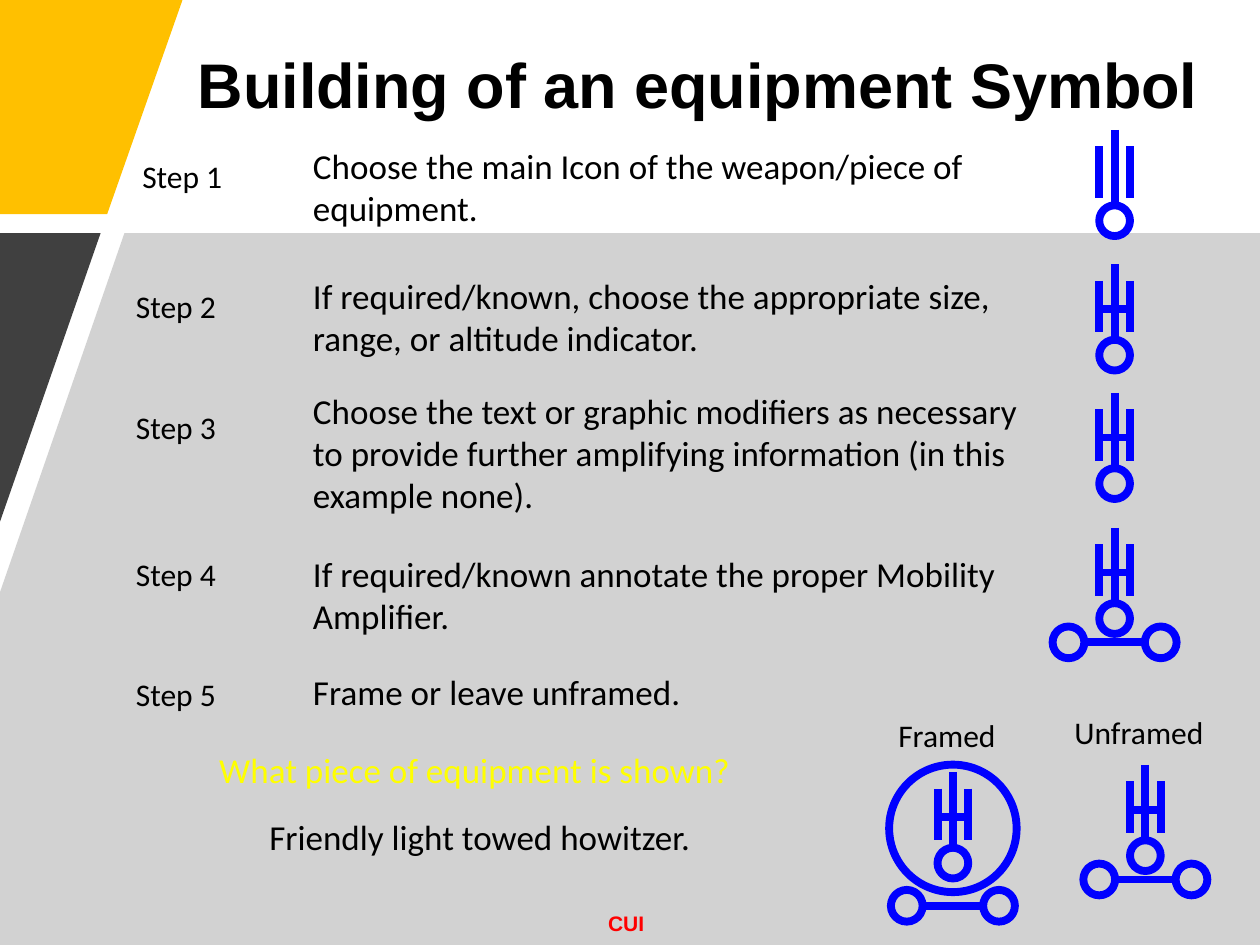
from lxml.etree import SubElement
from pptx import Presentation
from pptx.dml.color import RGBColor
from pptx.enum.shapes import MSO_CONNECTOR, MSO_SHAPE
from pptx.enum.text import MSO_AUTO_SIZE, PP_ALIGN
from pptx.oxml.ns import qn
from pptx.util import Cm, Pt


def colour(value):
    return RGBColor.from_string(value)


def write_text(frame, text, size=20, font="Calibri", fill="000000", bold=False, align=PP_ALIGN.LEFT):
    paragraph = frame.paragraphs[0]
    paragraph.alignment = align
    run = paragraph.add_run()
    run.text = text
    run.font.size = Pt(size)
    run.font.name = font
    run.font.bold = bold
    run.font.color.rgb = colour(fill)


class SymbolSlide:
    """Holds the drawing style and the slide, and adds each kind of element."""

    blue = "0000FF"
    weight = Pt(4.5)

    def __init__(self, slide):
        self.slide = slide

    def panel(self, points, fill, opacity=None):
        start, *others = [(Cm(x), Cm(y)) for x, y in points]
        builder = self.slide.shapes.build_freeform(*start)
        builder.add_line_segments(others)
        shape = builder.convert_to_shape()
        shape.shadow.inherit = False
        shape.fill.solid()
        shape.fill.fore_color.rgb = colour(fill)
        shape.line.fill.background()
        if opacity is not None:
            fill_colour = shape.fill._xPr.find(qn("a:solidFill"))[0]
            SubElement(fill_colour, qn("a:alpha")).set("val", str(opacity * 1000))

    def text(self, content, left, top, width, height, wrap=True, grow=True, **style):
        shape = self.slide.shapes.add_textbox(Cm(left), Cm(top), Cm(width), Cm(height))
        frame = shape.text_frame
        frame.word_wrap = wrap
        frame.auto_size = MSO_AUTO_SIZE.SHAPE_TO_FIT_TEXT if grow else MSO_AUTO_SIZE.NONE
        write_text(frame, content, **style)

    def label(self, content, left, top, width=2.13):
        self.text(content, left, top, width, 1.02, wrap=False, size=18)

    def line(self, x1, y1, x2, y2):
        connector = self.slide.shapes.add_connector(
            MSO_CONNECTOR.STRAIGHT, Cm(x1), Cm(y1), Cm(x2), Cm(y2))
        connector.line.color.rgb = colour(self.blue)
        connector.line.width = self.weight
        SubElement(connector._element.spPr, qn("a:effectLst"))

    def ring(self, x, y, diameter):
        shape = self.slide.shapes.add_shape(
            MSO_SHAPE.OVAL, Cm(x - diameter / 2), Cm(y - diameter / 2), Cm(diameter), Cm(diameter))
        shape.shadow.inherit = False
        shape.fill.background()
        shape.line.color.rgb = colour(self.blue)
        shape.line.width = self.weight

    def howitzer(self, x, top, crossbar=True):
        self.line(x, top, x, top + 1.56)
        for side in (x - 0.31, x + 0.31):
            self.line(side, top + 0.33, side, top + 1.37)
        self.ring(x, top + 1.83, 0.62)
        if crossbar:
            self.line(x - 0.31, top + 0.9, x + 0.31, top + 0.9)

    def axle(self, x, y):
        self.line(x - 0.62, y, x + 0.62, y)
        for wheel in (x + 0.93, x - 0.93):
            self.ring(wheel, y, 0.64)


STEPS = [
    ("Choose the main Icon of the weapon/piece of equipment.", 2.62, 3.05, 2.79, 14.73, 1.96),
    ("If required/known, choose the appropriate size, range, or altitude indicator.",
     2.49, 5.66, 5.41, 15.34, 1.96),
    ("Choose the text or graphic modifiers as necessary to provide further amplifying "
     "information (in this example none).", 2.49, 8.1, 7.72, 14.81, 2.82),
    ("If required/known annotate the proper Mobility Amplifier.", 2.49, 11.07, 11.02, 14.81, 1.96),
    ("Frame or leave unframed.", 2.49, 13.49, 13.39, 10.29, 1.12),
]


def main():
    presentation = Presentation()
    presentation.slide_width, presentation.slide_height = Cm(25.4), Cm(19.05)
    page = SymbolSlide(presentation.slides.add_slide(presentation.slide_layouts[6]))

    page.panel([(0, 0), (3.68, 0), (2.16, 4.32), (0, 4.32)], "FFC000")
    page.panel([(2.51, 4.7), (25.4, 4.7), (25.4, 19.05), (0, 19.05), (0, 11.94)], "A6A6A6", opacity=50)
    page.panel([(0, 4.7), (2.03, 4.7), (0, 10.52)], "404040")
    page.text("CUI", 12.01, 18.24, 1.24, 0.76, wrap=False,
              size=12, font="Arial", fill="FF0000", bold=True)
    page.text("Building of an equipment Symbol", 2.75, 0.8, 22.65, 2.34, grow=False,
              size=36, font="Arial", bold=True, align=PP_ALIGN.CENTER)

    for number, (content, label_left, label_top, top, width, height) in enumerate(STEPS, 1):
        page.label(f"Step {number}", label_left, label_top)
        page.text(content, 6.06, top, width, height)

    for index, top in enumerate((2.62, 5.33, 7.92, 10.64)):
        page.howitzer(22.47, top, crossbar=index > 0)
    page.axle(22.47, 12.95)

    page.howitzer(23.09, 15.42)
    page.axle(23.09, 17.73)
    page.label("Unframed", 21.41, 14.25, 3.15)

    page.howitzer(19.21, 15.57)
    page.axle(19.21, 18.26)
    page.ring(19.21, 16.7, 2.57)
    page.label("Framed", 17.86, 14.3, 2.49)

    page.text("What piece of equipment is shown?", 4.17, 14.96, 14.81, 1.12, fill="FFFF00")
    page.text("Friendly light towed howitzer.", 5.18, 16.31, 14.81, 1.12)
    presentation.save("out.pptx")


if __name__ == "__main__":
    main()
